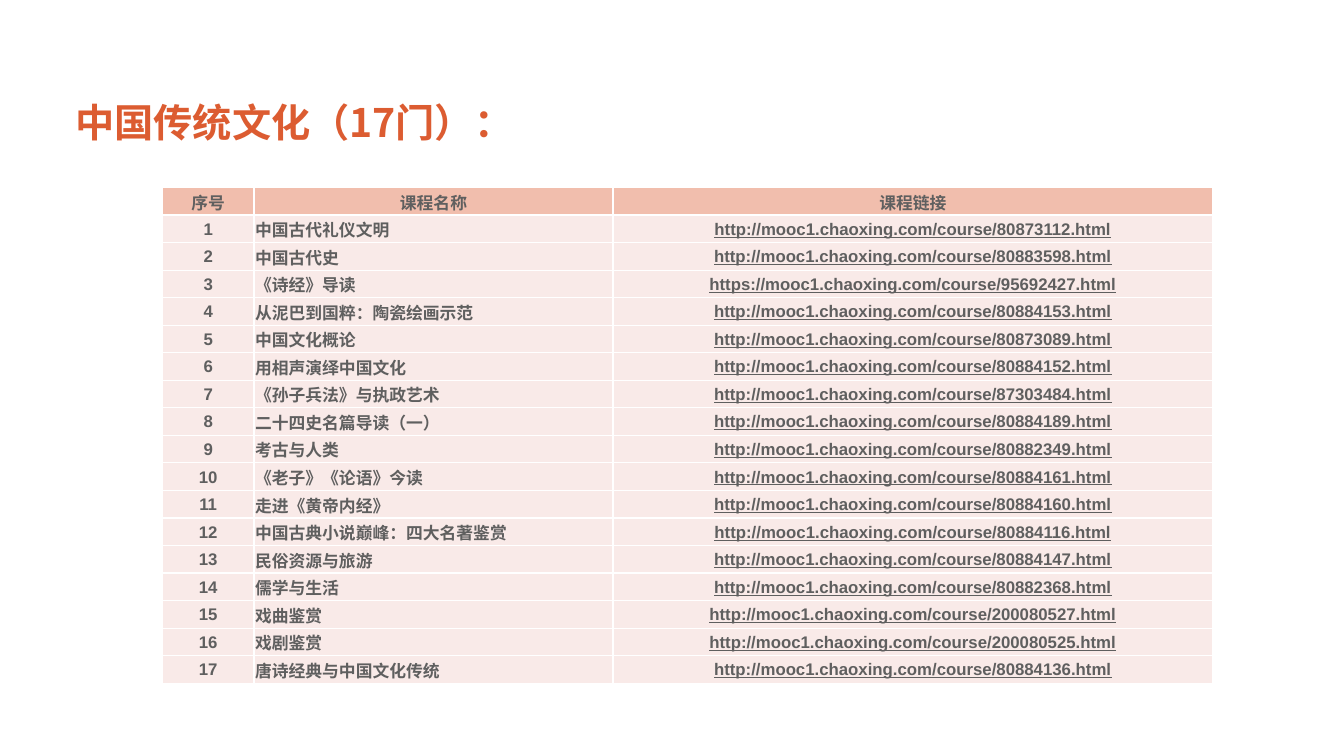
from dataclasses import dataclass

from lxml import etree
from pptx import Presentation
from pptx.dml.color import RGBColor
from pptx.enum.text import MSO_ANCHOR, PP_ALIGN
from pptx.oxml.ns import qn
from pptx.util import Inches, Pt

LEFT, CENTER = PP_ALIGN.LEFT, PP_ALIGN.CENTER
MIDDLE, BOTTOM = MSO_ANCHOR.MIDDLE, MSO_ANCHOR.BOTTOM

TITLE = "中国传统文化（17门）："
HEADERS = ("序号", "课程名称", "课程链接")
COURSES = [
    ("中国古代礼仪文明", "http://mooc1.chaoxing.com/course/80873112.html"),
    ("中国古代史", "http://mooc1.chaoxing.com/course/80883598.html"),
    ("《诗经》导读", "https://mooc1.chaoxing.com/course/95692427.html"),
    ("从泥巴到国粹：陶瓷绘画示范", "http://mooc1.chaoxing.com/course/80884153.html"),
    ("中国文化概论", "http://mooc1.chaoxing.com/course/80873089.html"),
    ("用相声演绎中国文化", "http://mooc1.chaoxing.com/course/80884152.html"),
    ("《孙子兵法》与执政艺术", "http://mooc1.chaoxing.com/course/87303484.html"),
    ("二十四史名篇导读（一）", "http://mooc1.chaoxing.com/course/80884189.html"),
    ("考古与人类", "http://mooc1.chaoxing.com/course/80882349.html"),
    ("《老子》《论语》今读", "http://mooc1.chaoxing.com/course/80884161.html"),
    ("走进《黄帝内经》", "http://mooc1.chaoxing.com/course/80884160.html"),
    ("中国古典小说巅峰：四大名著鉴赏", "http://mooc1.chaoxing.com/course/80884116.html"),
    ("民俗资源与旅游", "http://mooc1.chaoxing.com/course/80884147.html"),
    ("儒学与生活", "http://mooc1.chaoxing.com/course/80882368.html"),
    ("戏曲鉴赏", "http://mooc1.chaoxing.com/course/200080527.html"),
    ("戏剧鉴赏", "http://mooc1.chaoxing.com/course/200080525.html"),
    ("唐诗经典与中国文化传统", "http://mooc1.chaoxing.com/course/80884136.html"),
]
TITLE_BOX = (0.65, 0.73, 11.9, 0.77)
TABLE_BOX = (1.61, 1.86, 10.42, 4.92)
COL_WIDTHS = (0.91, 3.56, 5.95)


@dataclass(frozen=True)
class Theme:
    title: str = "DC5C31"
    text: str = "5F5F5F"
    header: str = "F1BEAD"
    body: str = "F9EAE8"
    border: str = "FFFFFF"
    title_size: int = 28
    cell_size: int = 12
    border_width: int = 1
    latin: str = "Arial"
    cjk: str = "Noto Sans CJK SC"


THEME = Theme()


def style_run(r, size, color, latin, underline=None):
    r.font.size = Pt(size)
    r.font.bold = True
    r.font.underline = underline
    r.font.color.rgb = RGBColor.from_string(color)
    r.font.name = latin
    etree.SubElement(r.font._element, qn("a:ea")).set("typeface", THEME.cjk)


def add_borders(cell):
    tc_pr = cell._tc.get_or_add_tcPr()
    for i, side in enumerate(("lnL", "lnR", "lnT", "lnB")):
        ln = etree.Element(qn(f"a:{side}"), w=str(Pt(THEME.border_width)))
        fill = etree.SubElement(ln, qn("a:solidFill"))
        etree.SubElement(fill, qn("a:srgbClr"), val=THEME.border)
        tc_pr.insert(i, ln)


def fill_cell(cell, text, fill, align, underline):
    cell.fill.solid()
    cell.fill.fore_color.rgb = RGBColor.from_string(fill)
    cell.margin_left = cell.margin_right = cell.margin_top = Inches(0.01)
    cell.margin_bottom = 0
    cell.vertical_anchor = MIDDLE
    p = cell.text_frame.paragraphs[0]
    p.text = text
    p.alignment = align
    style_run(p.runs[0], THEME.cell_size, THEME.text, THEME.latin, underline)
    add_borders(cell)


def add_title(s):
    tf = s.shapes.add_textbox(*map(Inches, TITLE_BOX)).text_frame
    tf.word_wrap = True
    tf.vertical_anchor = BOTTOM
    tf.text = TITLE
    p = tf.paragraphs[0]
    p.line_spacing = 0.9
    style_run(p.runs[0], THEME.title_size, THEME.title, THEME.cjk)


def add_courses(s):
    rows = [HEADERS] + [(str(n), *course) for n, course in enumerate(COURSES, 1)]
    table = s.shapes.add_table(len(rows), len(HEADERS), *map(Inches, TABLE_BOX)).table
    table.first_row = table.horz_banding = False
    for col, width in zip(table.columns, COL_WIDTHS):
        col.width = Inches(width)
    for i, row in enumerate(rows):
        table.rows[i].height = Inches(TABLE_BOX[3] / len(rows))
        for j, text in enumerate(row):
            fill = THEME.body if i else THEME.header
            align = LEFT if i and j == 1 else CENTER
            underline = True if i and j == 2 else None
            fill_cell(table.cell(i, j), text, fill, align, underline)


def main():
    prs = Presentation()
    prs.slide_width, prs.slide_height = Inches(13.33), Inches(7.5)
    s = prs.slides.add_slide(prs.slide_layouts[6])
    add_title(s)
    add_courses(s)
    prs.save("out.pptx")


if __name__ == "__main__":
    main()
